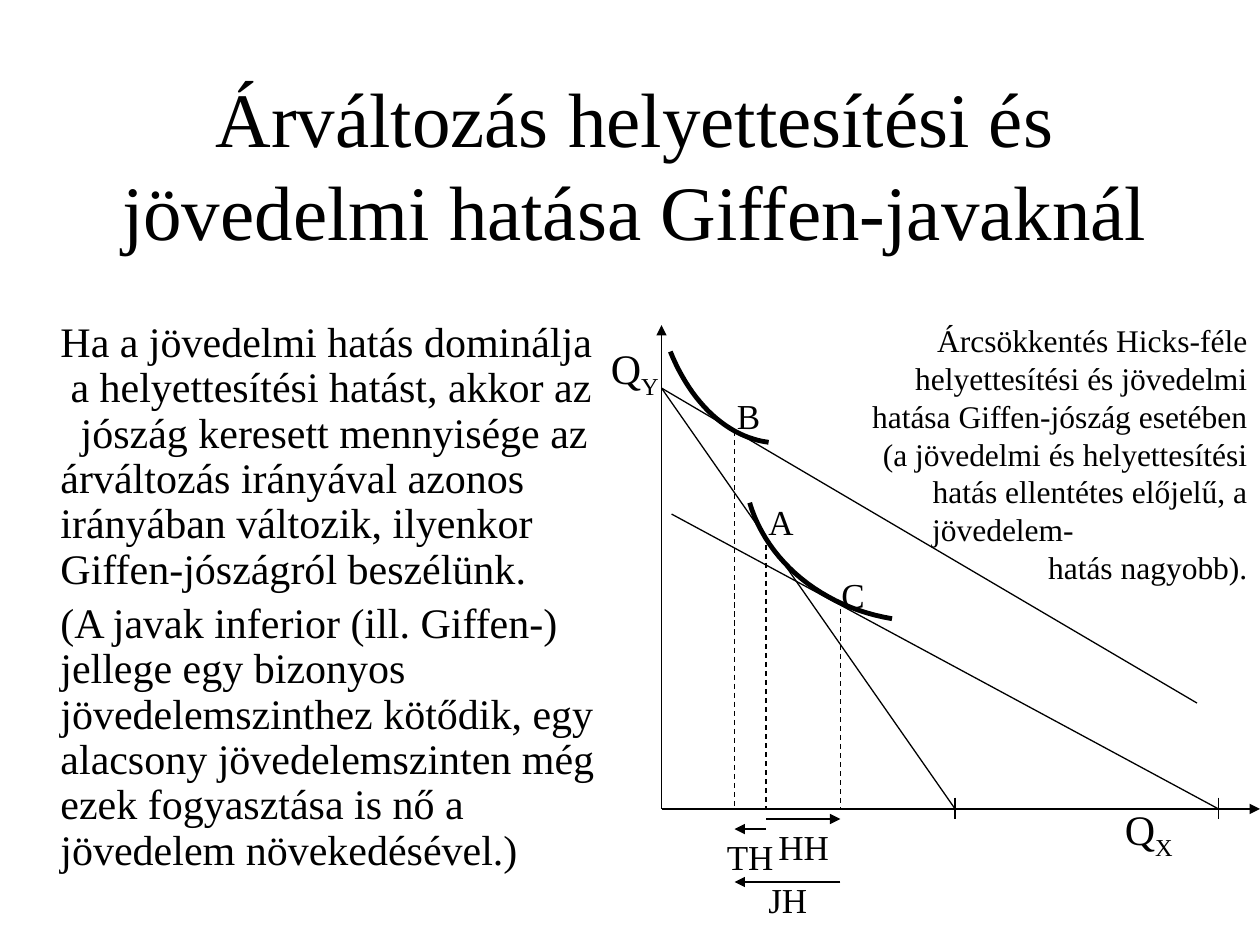
from dataclasses import dataclass

from lxml import etree
from pptx import Presentation
from pptx.dml.color import RGBColor
from pptx.enum import dml, shapes, text
from pptx.oxml import ns
from pptx.util import Inches, Pt


@dataclass
class Theme:
    ink: RGBColor = RGBColor(0, 0, 0)
    face: str = "Times New Roman"
    head: int = 44
    body: int = 24
    mark: int = 20
    note: int = 18
    thin: float = 0.75
    bold: float = 2.75


class Page:
    def __init__(self, deck, theme):
        self.slide = deck.slides.add_slide(deck.slide_layouts[1])
        self.theme = theme

    def place(self, item, box):
        item.left, item.top, item.width, item.height = map(Inches, box)
        frame = item.text_frame
        frame.word_wrap = True
        frame.auto_size = text.MSO_AUTO_SIZE.NONE
        return frame

    def run(self, para, words, size, base=0):
        run = para.add_run()
        run.text = words
        font = run.font
        font.name, font.size = self.theme.face, Pt(size)
        font.color.rgb = self.theme.ink
        if base:
            run._r.get_or_add_rPr().set("baseline", str(base * 1000))

    def paras(self, frame, count):
        return [frame.paragraphs[0]] + [frame.add_paragraph() for _ in range(count - 1)]

    def indent(self, para, left):
        props = para._p.get_or_add_pPr()
        props.set("marL", str(Inches(left)))
        props.set("indent", "0")
        return props

    def title(self, words, box):
        frame = self.place(self.slide.shapes.title, box)
        frame.vertical_anchor = text.MSO_ANCHOR.MIDDLE
        para = frame.paragraphs[0]
        para.alignment = text.PP_ALIGN.CENTER
        self.run(para, words, self.theme.head)

    def body(self, rows, box):
        frame = self.place(self.slide.placeholders[1], box)
        for para, (left, gap, words) in zip(self.paras(frame, len(rows)), rows):
            para.line_spacing = 0.9
            para.space_before = Pt(gap)
            props = self.indent(para, left)
            etree.SubElement(props, ns.qn("a:buNone"))
            self.run(para, words, self.theme.body)

    def note(self, rows, box):
        frame = self.place(self.slide.shapes.add_textbox(0, 0, 0, 0), box)
        for para, (side, left, words) in zip(self.paras(frame, len(rows)), rows):
            para.alignment = side
            self.indent(para, left)
            self.run(para, words, self.theme.note)

    def label(self, words, box, size, sub=""):
        frame = self.place(self.slide.shapes.add_textbox(0, 0, 0, 0), box)
        para = frame.paragraphs[0]
        self.run(para, words, size)
        if sub:
            self.run(para, sub, size, -25)

    def line(self, x1, y1, x2, y2, arrow=False, dash=False):
        item = self.slide.shapes.add_connector(
            shapes.MSO_CONNECTOR.STRAIGHT, *map(Inches, (x1, y1, x2, y2)))
        item.line.color.rgb = self.theme.ink
        item.line.width = Pt(self.theme.thin)
        if dash:
            item.line.dash_style = dml.MSO_LINE.DASH
        if arrow:
            tail = etree.SubElement(item.line._get_or_add_ln(), ns.qn("a:tailEnd"))
            tail.set("type", "triangle")
        etree.SubElement(item._element.spPr, ns.qn("a:effectLst"))

    def curve(self, knots, steps=24):
        dots = []
        for step in range(steps + 1):
            t = step / steps
            parts = ((1 - t) ** 3, 3 * t * (1 - t) ** 2, 3 * t * t * (1 - t), t ** 3)
            dots.append(tuple(
                Inches(sum(part * knot[axis] for part, knot in zip(parts, knots)))
                for axis in (0, 1)))
        pen = self.slide.shapes.build_freeform(*dots[0])
        pen.add_line_segments(dots[1:], close=False)
        item = pen.convert_to_shape()
        item.shadow.inherit = False
        item.fill.background()
        item.line.color.rgb = self.theme.ink
        item.line.width = Pt(self.theme.bold)


def main():
    deck = Presentation()
    deck.slide_width, deck.slide_height = Inches(10), Inches(7.5)
    theme = Theme()
    page = Page(deck, theme)

    page.title("Árváltozás helyettesítési és jövedelmi hatása Giffen-javaknál",
               (0.5, 0.67, 9.08, 1.25))
    page.body([
        (0.38, 0, "Ha a jövedelmi hatás dominálja"),
        (0.46, 0, "a helyettesítési hatást, akkor az"),
        (0.54, 0, "jószág keresett mennyisége az"),
        (0.38, 0, "árváltozás irányával azonos irányában változik, "
                  "ilyenkor Giffen-jószágról beszélünk."),
        (0.38, 5, "(A javak inferior (ill. Giffen-) jellege egy bizonyos "
                  "jövedelemszinthez kötődik, egy alacsony jövedelemszinten még "
                  "ezek fogyasztása is nő a jövedelem növekedésével.)"),
    ], (0, 2.5, 5.25, 4.5))

    left, base, top = 5.25, 6.42, 3.08
    tang, start, comp = 5.83, 6.08, 6.67
    page.line(left, base, left, 2.58, arrow=True)
    page.line(left, base, 10, base, arrow=True)
    for x in (7.58, 9.67):
        page.line(x, 6.33, x, 6.5)
    page.line(left, top, 7.58, base)
    page.line(left, top, 9.5, 5.58)
    page.line(5.33, 4.08, 9.67, base)
    for x, y in ((tang, 3.42), (start, 4.25), (comp, 4.83)):
        page.line(x, y, x, base, dash=True)
    for x1, x2, y in ((start, comp, 6.5), (start, tang, 6.58), (comp, tang, 7)):
        page.line(x1, y, x2, y, arrow=True)
    page.curve([(5.32, 2.79), (5.49, 3.21), (5.78, 3.47), (6.1, 3.51)])
    page.curve([(5.95, 3.99), (6.09, 4.46), (6.53, 4.82), (7.08, 4.91)])

    for name, x, y in (("A", 6, 3.92), ("B", 5.75, 3.08), ("C", 6.58, 4.5)):
        page.label(name, (x, y, 0.58, 0.44), theme.mark)
    for name, x, y in (("HH", 6.08, 6.5), ("TH", 5.67, 6.58), ("JH", 6, 6.92)):
        page.label(name, (x, y, 1.83, 0.44), theme.mark)
    page.label("Q", (4.75, 2.67, 0.75, 0.5), theme.body, "Y")
    page.label("Q", (8.83, 6.33, 1.17, 0.5), theme.body, "X")

    side = text.PP_ALIGN
    page.note([
        (side.RIGHT, 0, "Árcsökkentés Hicks-féle helyettesítési és jövedelmi hatása "
                        "Giffen-jószág esetében (a jövedelmi és helyettesítési "
                        "hatás ellentétes előjelű, a"),
        (side.LEFT, 0.55, "jövedelem-"),
        (side.RIGHT, 0, "hatás nagyobb)."),
    ], (6.75, 2.5, 3.25, 2.22))
    deck.save("out.pptx")


if __name__ == "__main__":
    main()
